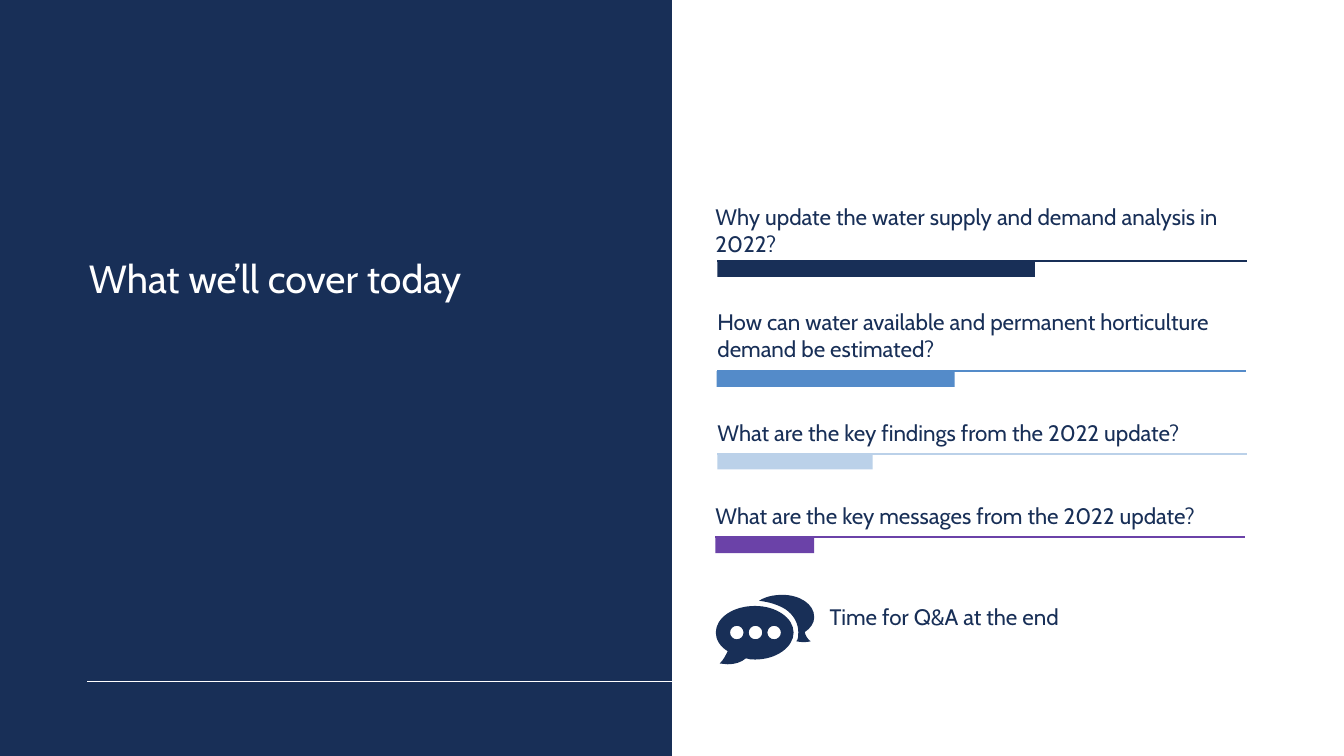
from lxml import etree
from pptx import Presentation
from pptx.dml.color import RGBColor
from pptx.enum.shapes import MSO_CONNECTOR, MSO_SHAPE
from pptx.enum.text import MSO_ANCHOR
from pptx.oxml.ns import qn
from pptx.util import Cm, Pt

RECTANGLE = MSO_SHAPE.RECTANGLE
STRAIGHT = MSO_CONNECTOR.STRAIGHT
TOP = MSO_ANCHOR.TOP
BOTTOM = MSO_ANCHOR.BOTTOM

FONT = "Cabin"
COLORS = {
    "navy": "182F57",
    "blue": "548BC9",
    "pale": "BBD1E9",
    "purple": "6B42A8",
    "white": "FFFFFF",
}
SLIDE_WIDTH, SLIDE_HEIGHT = 33.87, 19.05
LINE_HEIGHT = 0.69

TOPICS = [
    ("Why update the water supply and demand analysis in 2022?", 18.03, 5.13, 2, 18.08, 6.58, 8.0, "navy"),
    ("How can water available and permanent horticulture demand be estimated?",
     18.08, 7.77, 2, 18.06, 9.35, 6.0, "blue"),
    ("What are the key findings from the 2022 update?", 18.08, 10.57, 1, 18.08, 11.43, 3.91, "pale"),
    ("What are the key messages from the 2022 update?", 18.03, 12.65, 1, 18.03, 13.54, 2.49, "purple"),
]

FRONT_BUBBLE = [
    (0.99, 0.28),
    (0.43, 0.28), (0, 0.58), (0, 0.95),
    (0, 1.12), (0.1, 1.3), (0.3, 1.42),
    (0.25, 1.52), (0.2, 1.63), (0.1, 1.73),
    (0.18, 1.73), (0.23, 1.75), (0.3, 1.75),
    (0.48, 1.75), (0.64, 1.7), (0.76, 1.6),
    (0.84, 1.63), (0.91, 1.63), (0.99, 1.63),
    (1.52, 1.63), (1.96, 1.32), (1.96, 0.95),
    (1.96, 0.58), (1.52, 0.28), (0.99, 0.28),
]
BACK_BUBBLE = [
    (2.48, 0.56),
    (2.48, 0.23), (2.11, 0), (1.68, 0),
    (1.45, 0), (1.24, 0.05), (1.09, 0.15),
    (1.35, 0.18), (1.57, 0.25), (1.75, 0.36),
    (1.98, 0.51), (2.08, 0.74), (2.08, 0.94),
    (2.08, 1.02), (2.08, 1.12), (2.03, 1.17),
    (2.11, 1.19), (2.16, 1.19), (2.21, 1.19),
    (2.29, 1.19), (2.34, 1.19), (2.39, 1.17),
    (2.31, 1.12), (2.26, 1.02), (2.24, 0.94),
    (2.39, 0.84), (2.48, 0.71), (2.48, 0.56),
]
CIRCLE = [
    (0, 1),
    (-0.55, 1), (-1, 0.55), (-1, 0),
    (-1, -0.55), (-0.55, -1), (0, -1),
    (0.55, -1), (1, -0.55), (1, 0),
    (1, 0.55), (0.55, 1), (0, 1),
]
DOT_RADIUS = 0.17
DOTS = [
    [(0.53 + 0.47 * index + DOT_RADIUS * x, 0.95 + DOT_RADIUS * y) for x, y in CIRCLE]
    for index in range(3)
]


def color(name):
    return RGBColor.from_string(COLORS[name])


def paint(shape, fill):
    shape.shadow.inherit = False
    shape.fill.solid()
    shape.fill.fore_color.rgb = color(fill)
    shape.line.fill.background()


def add_bar(slide, left, top, width, height, fill):
    bar = slide.shapes.add_shape(RECTANGLE, Cm(left), Cm(top), Cm(width), Cm(height))
    paint(bar, fill)


def add_rule(slide, start, end, top, stroke, weight):
    rule = slide.shapes.add_connector(STRAIGHT, Cm(start), Cm(top), Cm(end), Cm(top))
    rule.line.color.rgb = color(stroke)
    rule.line.width = Pt(weight)
    etree.SubElement(rule._element.spPr, qn("a:effectLst"))


def add_text(slide, left, top, width, height, text, size, fill, anchor=TOP, spacing=1.0):
    box = slide.shapes.add_textbox(Cm(left), Cm(top), Cm(width), Cm(height))
    frame = box.text_frame
    frame.word_wrap = True
    frame.vertical_anchor = anchor
    frame.margin_left = frame.margin_right = frame.margin_top = frame.margin_bottom = 0
    frame.text = text
    paragraph = frame.paragraphs[0]
    paragraph.line_spacing = spacing
    font = paragraph.runs[0].font
    font.name = FONT
    font.size = Pt(size)
    font.color.rgb = color(fill)


def curve_segments(shape):
    segments = list(shape._element.iter(qn("a:lnTo")))
    for index in range(0, len(segments), 3):
        curve = etree.Element(qn("a:cubicBezTo"))
        segments[index].addprevious(curve)
        for segment in segments[index:index + 3]:
            curve.append(segment[0])
            segment.getparent().remove(segment)


def add_outline(slide, left, top, contours, fill):
    placed = [[(Cm(left + x), Cm(top + y)) for x, y in contour] for contour in contours]
    builder = slide.shapes.build_freeform(*placed[0][0], scale=1.0)
    builder.add_line_segments(placed[0][1:], close=True)
    for contour in placed[1:]:
        builder.move_to(*contour[0])
        builder.add_line_segments(contour[1:], close=True)
    outline = builder.convert_to_shape()
    curve_segments(outline)
    paint(outline, fill)


def add_title_panel(slide, left, top, width, height):
    add_bar(slide, left, top, width, height, "navy")
    add_rule(slide, left + 2.2, left + width, top + 17.17, "white", 0.5)
    add_text(slide, left + 2.24, top + 6.53, 12.6, 1.07, "What we’ll cover today", 28, "white", BOTTOM, 0.9)


def add_topic(slide, width, topic):
    text, text_left, text_top, lines, rule_left, rule_top, bar_width, accent = topic
    add_text(slide, text_left, text_top, width + 0.33, lines * LINE_HEIGHT, text, 16, "navy")
    add_rule(slide, rule_left + width, rule_left, rule_top, accent, 1.5)
    add_bar(slide, rule_left, rule_top, bar_width, 0.4, accent)


def add_closing_note(slide, left, top):
    add_outline(slide, left, top, [FRONT_BUBBLE, *DOTS], "navy")
    add_outline(slide, left, top, [BACK_BUBBLE], "navy")
    add_text(slide, left + 2.87, top + 0.21, 10.39, LINE_HEIGHT, "Time for Q&A at the end", 16, "navy")


def main():
    presentation = Presentation()
    presentation.slide_width = Cm(SLIDE_WIDTH)
    presentation.slide_height = Cm(SLIDE_HEIGHT)
    slide = presentation.slides.add_slide(presentation.slide_layouts[6])
    add_title_panel(slide, 0, 0, SLIDE_WIDTH / 2, SLIDE_HEIGHT)
    for topic in TOPICS:
        add_topic(slide, 13.34, topic)
    add_closing_note(slide, 18.04, 14.99)
    presentation.save("out.pptx")


if __name__ == "__main__":
    main()
